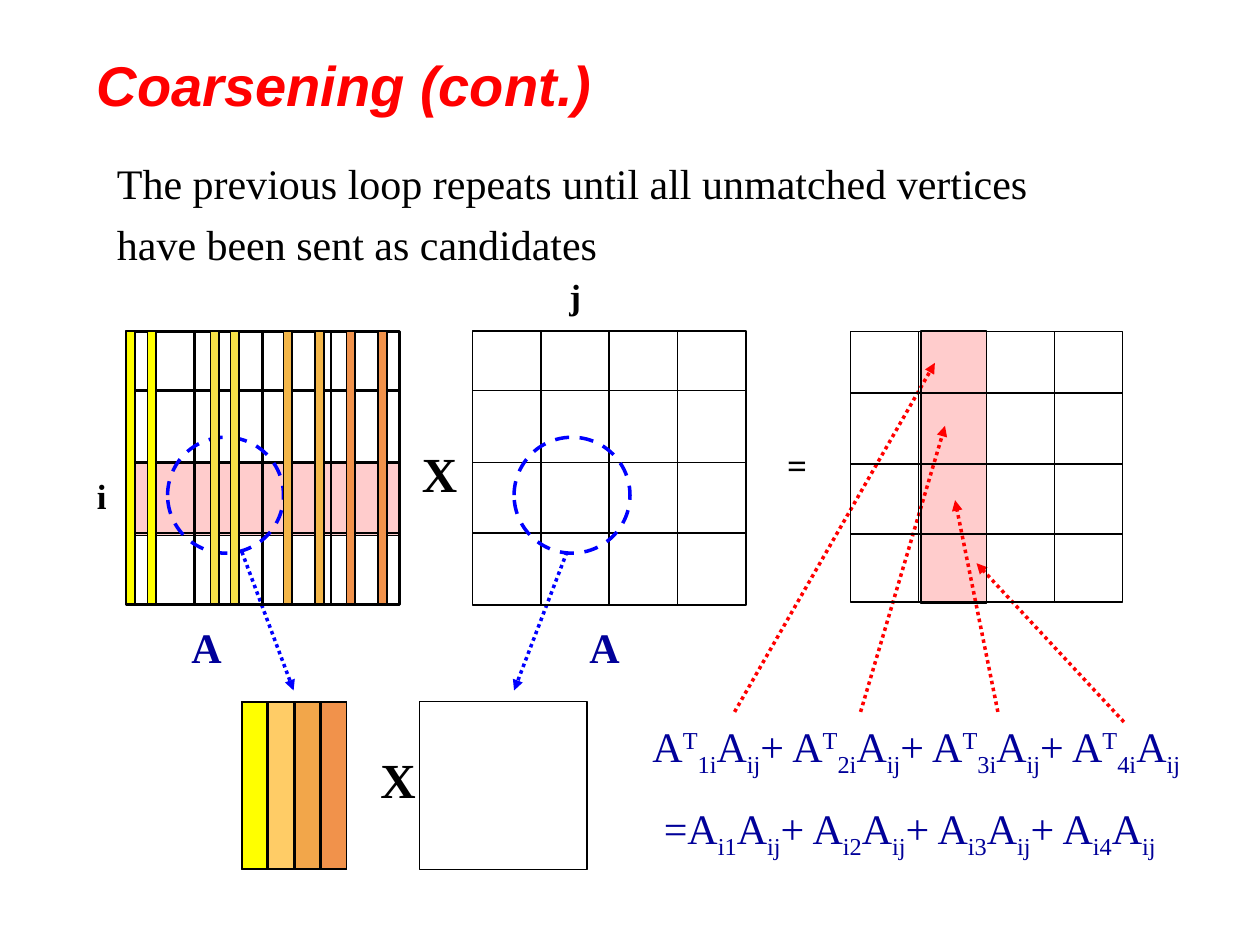
import pptx
import pptx.util
import pptx.dml.color
import pptx.enum.dml
import pptx.enum.shapes
import pptx.enum.text
import pptx.oxml.ns
import lxml.etree

Inches = pptx.util.Inches
Pt = pptx.util.Pt
RGB = pptx.dml.color.RGBColor.from_string
Dash = pptx.enum.dml.MSO_LINE
Preset = pptx.enum.shapes.MSO_SHAPE
qn = pptx.oxml.ns.qn

COLORS = {
    "black": "000000", "red": "FF0000", "blue": "0000FF", "navy": "000099",
    "yellow": "FFFF00", "gold": "F5E047", "amber": "F3B649", "orange": "F1924B",
    "peach": "FFCC66", "tan": "F2A64A",
}

deck = pptx.Presentation()
deck.slide_width = Inches(10)
deck.slide_height = Inches(7.5)
page = deck.slides.add_slide(deck.slide_layouts[6])


def draw_shape(preset, left, top, width, height, fill=None, alpha=None,
               line="black", weight=1, dash=None):
    shape = page.shapes.add_shape(
        preset, Inches(left), Inches(top), Inches(width), Inches(height))
    shape.shadow.inherit = False
    if fill:
        shape.fill.solid()
        shape.fill.fore_color.rgb = RGB(COLORS[fill])
    else:
        shape.fill.background()
    if alpha:
        color = shape.fill._xPr.find(qn("a:solidFill"))[0]
        lxml.etree.SubElement(color, qn("a:alpha")).set("val", str(alpha * 1000))
    shape.line.color.rgb = RGB(COLORS[line])
    shape.line.width = Pt(weight)
    if dash:
        shape.line.dash_style = dash
    return shape


def draw_line(x1, y1, x2, y2, color="black", weight=1, arrow=False):
    line = page.shapes.add_connector(
        pptx.enum.shapes.MSO_CONNECTOR.STRAIGHT,
        Inches(x1), Inches(y1), Inches(x2), Inches(y2))
    line.line.color.rgb = RGB(COLORS[color])
    line.line.width = Pt(weight)
    if arrow:
        line.line.dash_style = Dash.ROUND_DOT
        outline = line.line._get_or_add_ln()
        lxml.etree.SubElement(outline, qn("a:tailEnd")).set("type", "triangle")
    lxml.etree.SubElement(line._element.spPr, qn("a:effectLst"))
    return line


arrows = [
    (1.92, 4.38, 2.33, 5.48, "blue"),
    (4.5, 4.38, 4.08, 5.48, "blue"),
    (5.83, 5.65, 7.42, 2.88, "red"),
    (6.83, 5.65, 7.5, 3.38, "red"),
    (7.92, 5.65, 7.58, 3.97, "red"),
    (8.92, 5.73, 7.75, 4.47, "red"),
]
for x1, y1, x2, y2, color in arrows:
    draw_line(x1, y1, x2, y2, color, 2, arrow=True)

draw_shape(Preset.RECTANGLE, 1.01, 3.67, 2.17, 0.58, "red", 20)
draw_shape(Preset.RECTANGLE, 7.31, 2.63, 0.52, 2.16, "red", 20)

grid_top = 2.63
matrices = [
    (1, 2.17, 2.17, 1.5, (3.1, 3.67, 4.23)),
    (3.75, 2.17, 2.17, 1, (3.1, 3.67, 4.23)),
    (6.75, 2.16, 2.15, 1, (3.12, 3.68, 4.24)),
]
for left, width, height, weight, rows in matrices:
    frame = draw_shape(Preset.RECTANGLE, left, grid_top, width, height, weight=weight)
    for y in rows:
        draw_line(left, y, left + width, y, weight=weight)
    for column in (1, 2, 3):
        x = left + column * width / 4
        divider = draw_line(x, grid_top, x, grid_top + height, weight=weight)
        if column == 2:
            divider.begin_connect(frame, 0)
            divider.end_connect(frame, 2)

for left in (1.33, 4.08):
    draw_shape(Preset.OVAL, left, 3.47, 0.92, 0.92,
               line="blue", weight=2, dash=Dash.DASH)

column_strips = [
    ("yellow", (1, 1.17)), ("gold", (1.67, 1.83)),
    ("amber", (2.25, 2.5)), ("orange", (2.75, 3)),
]
for fill, lefts in column_strips:
    for left in lefts:
        draw_shape(Preset.RECTANGLE, left, grid_top, 0.07, 2.16, fill)

draw_shape(Preset.RECTANGLE, 3.33, 5.57, 1.33, 1.33, weight=0.75)
draw_shape(Preset.RECTANGLE, 1.92, 5.57, 0.83, 1.33, weight=0.75)
for index, fill in enumerate(("yellow", "peach", "tan", "orange")):
    draw_shape(Preset.RECTANGLE, 1.92 + 0.21 * index, 5.57, 0.2, 1.33, fill)

transposed_sum = []
column_sum = []
for term in range(1, 5):
    plus = "+ " if term > 1 else ""
    transposed_sum += [(plus + "A", 0), ("T", 30), (f"{term}i", -25), ("A", 0), ("ij", -25)]
    column_sum += [((plus or "=") + "A", 0), (f"i{term}", -25), ("A", 0), ("ij", -25)]

serif = "Times New Roman"
texts = [
    (0.67, 0.33, 8.19, 0.67, 32, "red", "Arial", True, True, [[("Coarsening (cont.)", 0)]]),
    (0.83, 1.2, 8.27, 0.98, 24, "black", serif, False, True,
     [[("The previous loop repeats until all unmatched vertices", 0)],
      [("have been sent as candidates", 0)]]),
    (5.08, 5.67, 4.58, 0.77, 24, "navy", serif, False, True, [transposed_sum]),
    (5.17, 6.32, 4.25, 0.77, 24, "navy", serif, False, True, [column_sum]),
    (3.25, 3.47, 0.33, 0.4, 28, "black", serif, True, True, [[("X", 0)]]),
    (2.92, 5.9, 0.33, 0.4, 28, "black", serif, True, True, [[("X", 0)]]),
    (6.08, 3.47, 0.44, 0.43, 20, "black", serif, True, False, [[(" =", 0)]]),
    (4.42, 2.13, 0.28, 0.43, 20, "black", serif, True, False, [[("j", 0)]]),
    (0.67, 3.72, 0.28, 0.43, 20, "black", serif, True, False, [[("i", 0)]]),
    (1.42, 4.88, 0.44, 0.5, 24, "navy", serif, True, False, [[("A", 0)]]),
    (4.58, 4.88, 0.44, 0.5, 24, "navy", serif, True, False, [[("A", 0)]]),
]
for left, top, width, height, size, color, font, bold, wrap, paragraphs in texts:
    box = page.shapes.add_textbox(Inches(left), Inches(top), Inches(width), Inches(height))
    frame = box.text_frame
    frame.word_wrap = wrap
    if font == "Arial":
        frame.vertical_anchor = pptx.enum.text.MSO_ANCHOR.MIDDLE
    for index, runs in enumerate(paragraphs):
        para = frame.add_paragraph() if index else frame.paragraphs[0]
        if index:
            para.space_before = Pt(6)
        for words, baseline in runs:
            span = para.add_run()
            span.text = words
            span.font.name = font
            span.font.size = Pt(size)
            span.font.bold = bold
            span.font.italic = font == "Arial"
            span.font.color.rgb = RGB(COLORS[color])
            if baseline:
                span._r.get_or_add_rPr().set("baseline", str(baseline * 1000))

deck.save("out.pptx")
